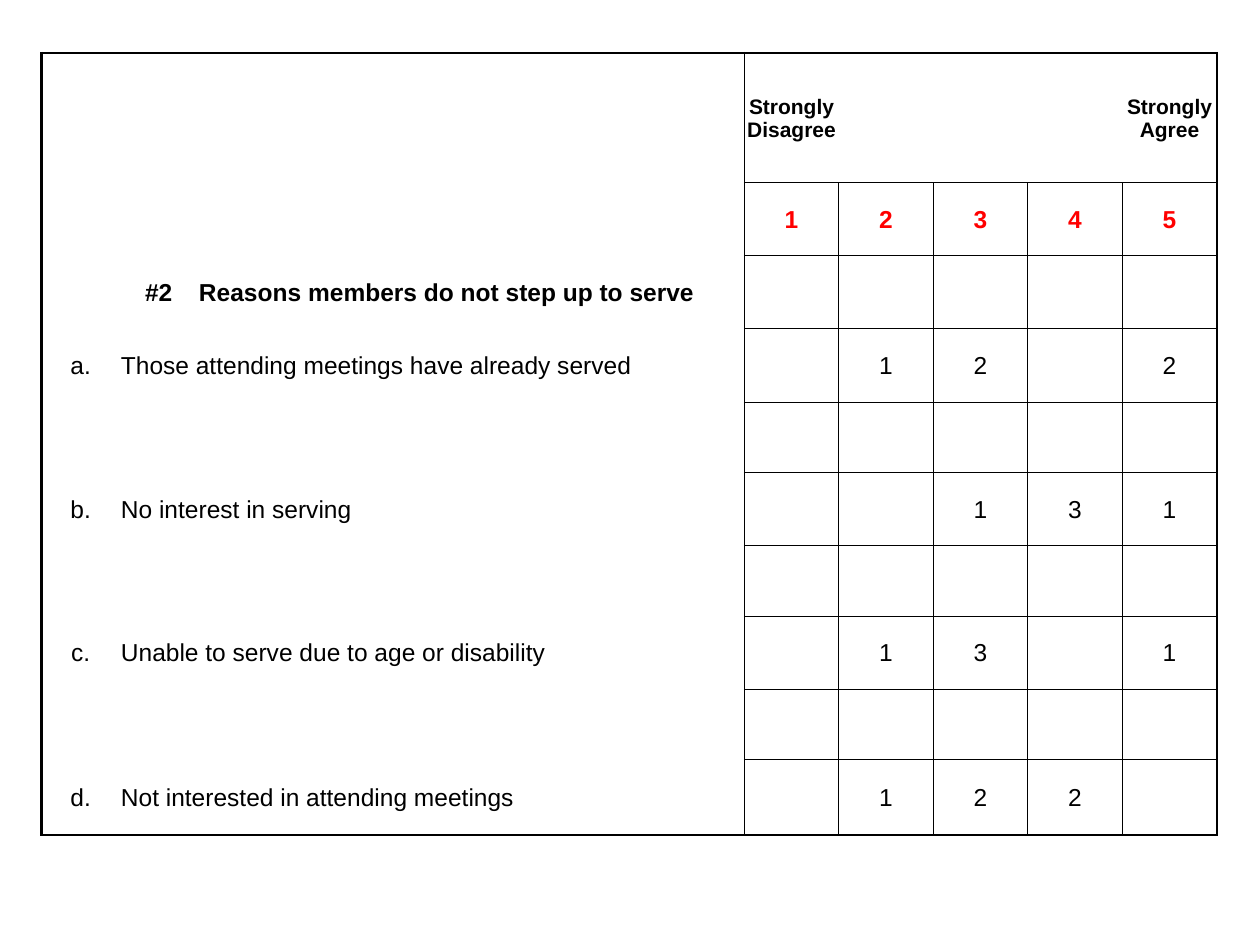
"""Build a survey slide: reasons members do not step up to serve, rated 1 to 5."""
from lxml.etree import SubElement
from pptx import Presentation
from pptx.dml.color import RGBColor
from pptx.enum.text import MSO_ANCHOR as Anchor, PP_ALIGN as Align
from pptx.oxml.ns import qn
from pptx.util import Inches, Pt

BLACK = RGBColor(0x00, 0x00, 0x00)
RED = RGBColor(0xFF, 0x00, 0x00)
FONT = "Arial"
THIN, THICK = 0.5, 1.5

HEADING = ("#2", "Reasons members do not step up to serve")
SCALE_ENDS = ("Strongly Disagree", "Strongly Agree")
SCORES = ("1", "2", "3", "4", "5")
REASONS = [
    ("a.", "Those attending meetings have already served", ("", "1", "2", "", "2")),
    ("b.", "No interest in serving", ("", "", "1", "3", "1")),
    ("c.", "Unable to serve due to age or disability", ("", "1", "3", "", "1")),
    ("d.", "Not interested in attending meetings", ("", "1", "2", "2", "")),
]

LABEL_COLS = 9
COLUMNS = [0.62] * LABEL_COLS + [0.75] * len(SCORES)
ROWS = [1.03, 0.58, 0.58, 0.58, 0.56, 0.58, 0.56, 0.58, 0.56, 0.6]
LAST_COL, LAST_ROW = len(COLUMNS) - 1, len(ROWS) - 1
SCORE_ROW, HEADING_ROW, FIRST_REASON_ROW = 1, 2, 3


def write(cell, words, size=14, bold=False, color=BLACK, align=Align.CENTER):
    cell.text_frame.text = words
    paragraph = cell.text_frame.paragraphs[0]
    paragraph.alignment = align
    for run in paragraph.runs:
        font = run.font
        font.name, font.size, font.bold = FONT, Pt(size), bold
        font.color.rgb = color


def write_label(grid, row, col, words, bold=False):
    cell = grid.cell(row, col)
    cell.merge(grid.cell(row, LABEL_COLS - 1))
    write(cell, words, bold=bold, align=Align.LEFT)


def edge_widths(row, col, end_col):
    rated = col >= LABEL_COLS
    open_header = row == 0
    left_line = col == LABEL_COLS or (rated and not open_header)
    right_line = end_col == LABEL_COLS - 1 or (rated and not open_header)
    return {
        "a:lnL": THICK if col == 0 else THIN * left_line,
        "a:lnR": THICK if end_col == LAST_COL else THIN * right_line,
        "a:lnT": THICK if row == 0 else THIN * rated,
        "a:lnB": THICK if row == LAST_ROW else THIN * rated,
    }


def draw_edges(cell, widths):
    properties = cell._tc.get_or_add_tcPr()
    for tag, width in widths.items():
        line = SubElement(properties, qn(tag), w=str(Pt(width)))
        if width:
            fill = SubElement(line, qn("a:solidFill"))
            SubElement(fill, qn("a:srgbClr"), val=str(BLACK))
        else:
            SubElement(line, qn("a:noFill"))


def main():
    deck = Presentation()
    deck.slide_width, deck.slide_height = Inches(10), Inches(7.5)
    slide = deck.slides.add_slide(deck.slide_layouts[6])
    grid = slide.shapes.add_table(
        len(ROWS), len(COLUMNS), Inches(0.33), Inches(0.42),
        Inches(sum(COLUMNS)), Inches(sum(ROWS))).table
    grid.first_row = grid.horz_banding = False
    for column, width in zip(grid.columns, COLUMNS):
        column.width = Inches(width)
    for row, height in zip(grid.rows, ROWS):
        row.height = Inches(height)

    for col, words in zip((LABEL_COLS, LAST_COL), SCALE_ENDS):
        write(grid.cell(0, col), words, size=12, bold=True)
    for col, score in enumerate(SCORES, LABEL_COLS):
        write(grid.cell(SCORE_ROW, col), score, bold=True, color=RED)
    number, title = HEADING
    write(grid.cell(HEADING_ROW, 1), number, bold=True)
    write_label(grid, HEADING_ROW, 2, title, bold=True)
    for index, (letter, reason, counts) in enumerate(REASONS):
        row = FIRST_REASON_ROW + 2 * index
        write(grid.cell(row, 0), letter)
        write_label(grid, row, 1, reason)
        for col, count in enumerate(counts, LABEL_COLS):
            write(grid.cell(row, col), count)

    for row in range(len(ROWS)):
        for col in range(len(COLUMNS)):
            cell = grid.cell(row, col)
            cell.margin_left = cell.margin_right = cell.margin_top = Inches(0.01)
            cell.margin_bottom = 0
            cell.vertical_anchor = Anchor.MIDDLE
            draw_edges(cell, edge_widths(row, col, col + cell.span_width - 1))
            cell.fill.background()
    deck.save("out.pptx")


if __name__ == "__main__":
    main()
